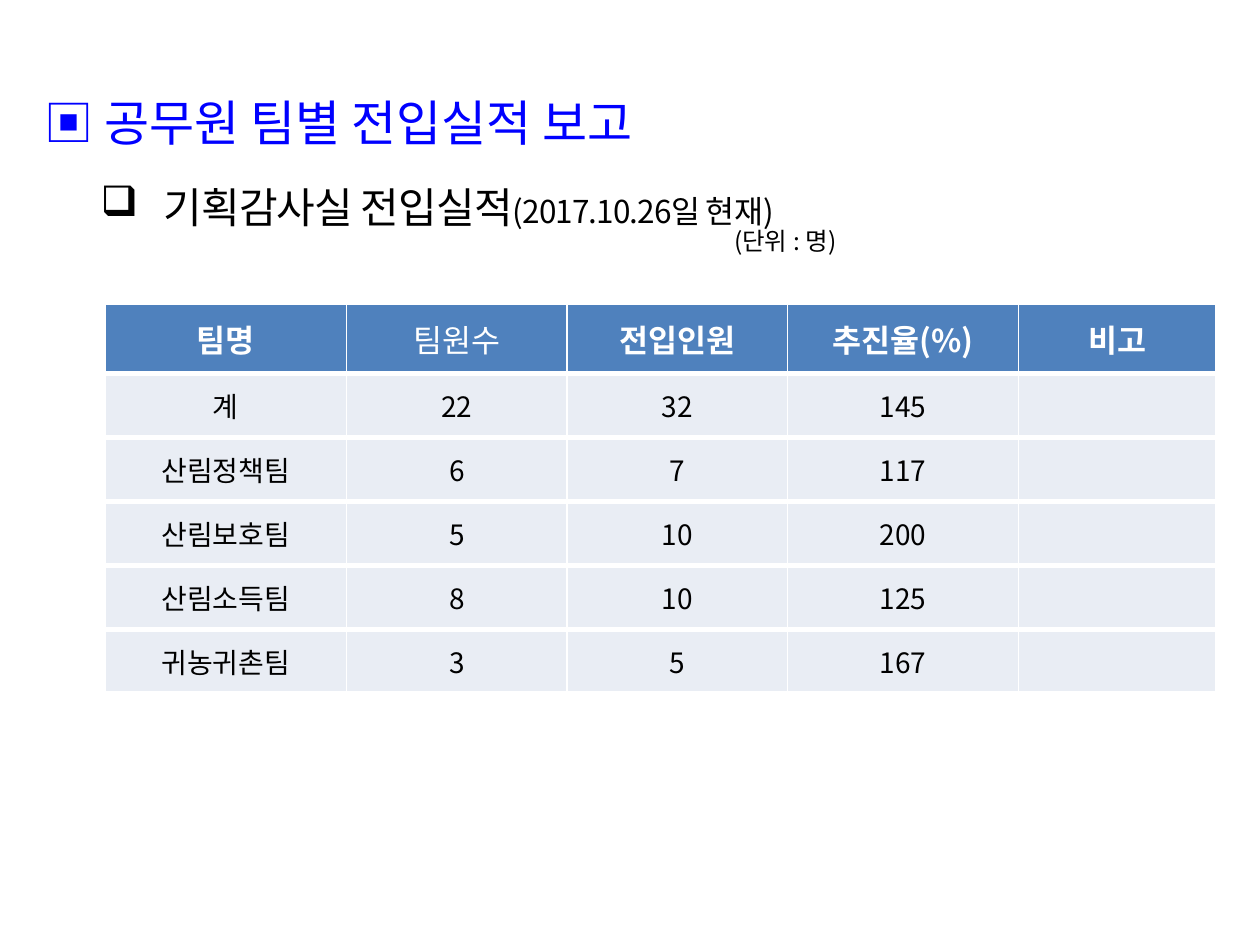
from dataclasses import dataclass

from lxml.etree import SubElement
from pptx import Presentation
from pptx.dml.color import RGBColor
from pptx.enum.text import MSO_ANCHOR as Anchor, PP_ALIGN as Align
from pptx.oxml.ns import qn
from pptx.util import Pt

FONT = "Noto Sans CJK KR"
WHITE, BLACK, BLUE = "FFFFFF", "000000", "0000FF"
HEADER_FILL, BODY_FILL = "4F81BD", "E9EDF4"


@dataclass
class Piece:
    text: str
    size: float
    color: str = BLACK
    tracking: float = 0


@dataclass
class Line:
    pieces: list[Piece]
    margin: float
    indent: float
    spacing: float
    bullet: str = ""
    level: int = 0


LINES = [
    Line([Piece("▣ 공무원 팀별 전입실적 보고", 28, BLUE)], 40, -36, 1.04),
    Line([Piece("기획감사실 전입실적", 24, tracking=-0.5),
          Piece("(2017.10.26일 현재)", 18, tracking=-0.5)],
         72, -36, 1.6, "❑", 1),
    Line([Piece("(단위 : 명)", 14)], 398, 0, 0.8, level=1),
]
HEADERS = ["팀명", "팀원수", "전입인원", "추진율(%)", "비고"]
TEAMS = [
    ("계", 22, 32, 145, ""),
    ("산림정책팀", 6, 7, 117, ""),
    ("산림보호팀", 5, 10, 200, ""),
    ("산림소득팀", 8, 10, 125, ""),
    ("귀농귀촌팀", 3, 5, 167, ""),
]
COLUMN_WIDTHS = [138, 126, 126, 132, 113]
HEADER_HEIGHT, TEAM_HEIGHT = 39.6, 36.6


def rgb(color: str) -> RGBColor:
    return RGBColor.from_string(color)


def style_run(run, size: float, color: str, bold: bool = False) -> None:
    """Set the font for Latin and Korean letters alike."""
    run.font.size = Pt(size)
    run.font.bold = bold
    run.font.color.rgb = rgb(color)
    run.font.name = FONT
    SubElement(run.font._element, qn("a:ea"), typeface=FONT)


def write_line(paragraph, line: Line) -> None:
    paragraph.level = line.level
    paragraph.line_spacing = line.spacing
    paragraph.space_before = Pt(0)
    props = paragraph._p.get_or_add_pPr()
    props.set("marL", str(Pt(line.margin)))
    props.set("indent", str(Pt(line.indent)))
    if line.bullet:
        bullet_color = SubElement(props, qn("a:buClr"))
        SubElement(bullet_color, qn("a:srgbClr"), val=BLACK)
        SubElement(props, qn("a:buChar"), char=line.bullet)
    else:
        SubElement(props, qn("a:buNone"))
    for piece in line.pieces:
        run = paragraph.add_run()
        run.text = piece.text
        style_run(run, piece.size, piece.color)
        if piece.tracking:
            run.font._element.set("spc", str(int(piece.tracking * 100)))


def add_heading(slide) -> None:
    frame = slide.shapes.add_textbox(Pt(14.4), Pt(48), Pt(705.6), Pt(454)).text_frame
    frame.word_wrap = True
    for index, line in enumerate(LINES):
        write_line(frame.add_paragraph() if index else frame.paragraphs[0], line)


def border_cell(cell, top: float, bottom: float) -> None:
    props = cell._tc.get_or_add_tcPr()
    for side, width in (("L", 1), ("R", 1), ("T", top), ("B", bottom)):
        border = SubElement(props, qn(f"a:ln{side}"), w=str(Pt(width)))
        fill = SubElement(border, qn("a:solidFill"))
        SubElement(fill, qn("a:srgbClr"), val=WHITE)


def fill_cell(cell, value: str, is_header: bool) -> None:
    border_cell(cell, 1 if is_header else 3, 3)
    cell.fill.solid()
    cell.fill.fore_color.rgb = rgb(HEADER_FILL if is_header else BODY_FILL)
    cell.vertical_anchor = Anchor.MIDDLE
    cell.text_frame.text = value
    paragraph = cell.text_frame.paragraphs[0]
    paragraph.alignment = Align.CENTER
    for run in paragraph.runs:
        if is_header:
            style_run(run, 18, WHITE, bold=value != "팀원수")
        else:
            style_run(run, 16, BLACK)


def add_results(slide) -> None:
    rows = [HEADERS, *TEAMS]
    heights = [HEADER_HEIGHT] + [TEAM_HEIGHT] * len(TEAMS)
    table = slide.shapes.add_table(
        len(rows), len(HEADERS), Pt(60), Pt(173.8),
        Pt(sum(COLUMN_WIDTHS)), Pt(sum(heights))).table
    for column, width in zip(table.columns, COLUMN_WIDTHS):
        column.width = Pt(width)
    for row_index, (row, height, values) in enumerate(zip(table.rows, heights, rows)):
        row.height = Pt(height)
        for cell, value in zip(row.cells, values):
            fill_cell(cell, str(value), row_index == 0)


def main() -> None:
    deck = Presentation()
    deck.slide_width, deck.slide_height = Pt(720), Pt(540)
    slide = deck.slides.add_slide(deck.slide_layouts[6])
    add_heading(slide)
    add_results(slide)
    deck.save("out.pptx")


if __name__ == "__main__":
    main()
